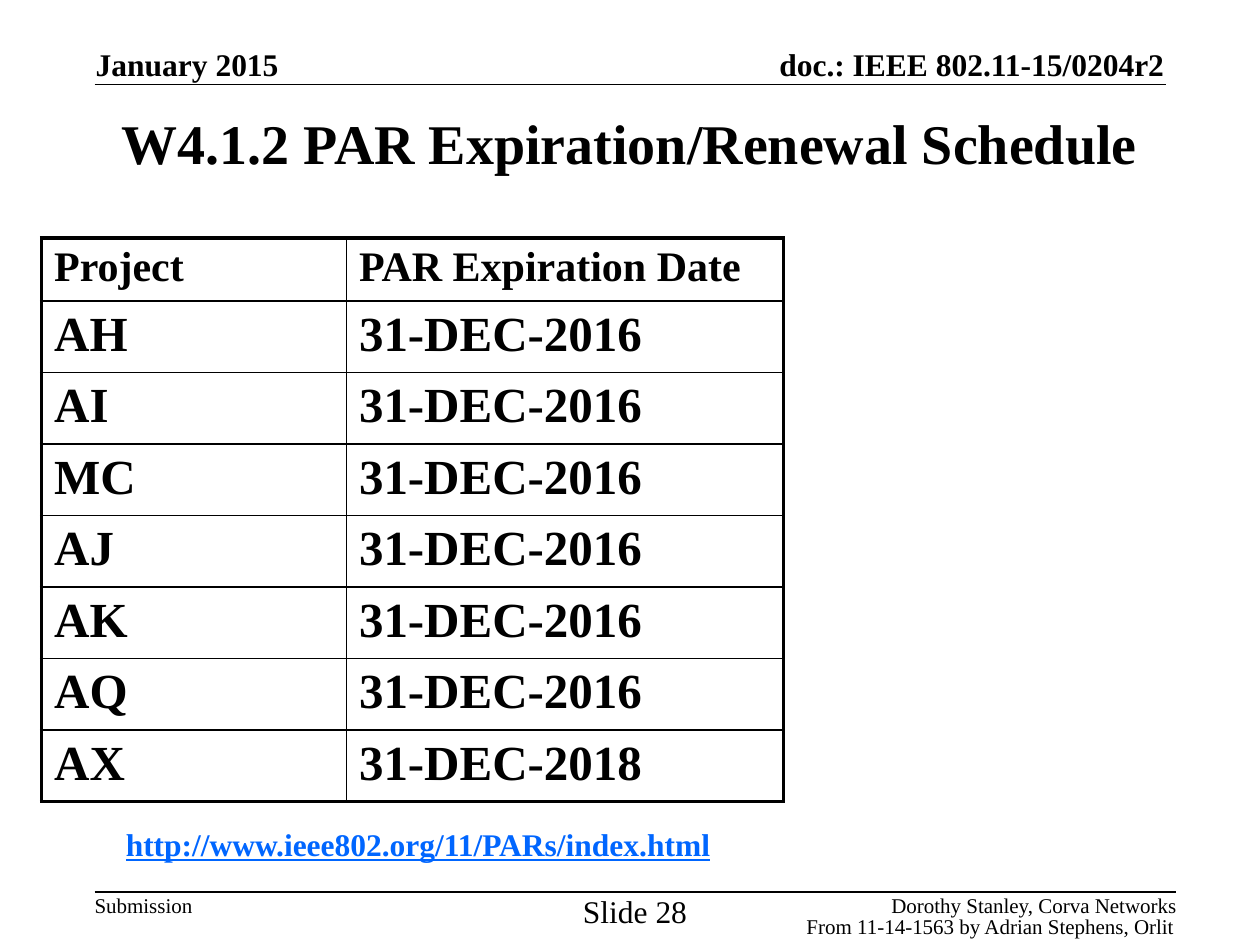
from lxml import etree
from pptx import Presentation
from pptx.dml.color import RGBColor
from pptx.enum.shapes import MSO_CONNECTOR
from pptx.enum.text import MSO_ANCHOR, PP_ALIGN
from pptx.oxml.ns import qn
from pptx.util import Inches, Pt

LEFT, CENTER, RIGHT = PP_ALIGN.LEFT, PP_ALIGN.CENTER, PP_ALIGN.RIGHT
TOP, MIDDLE, BOTTOM = MSO_ANCHOR.TOP, MSO_ANCHOR.MIDDLE, MSO_ANCHOR.BOTTOM
BLACK, LINK_BLUE = "000000", "0066FF"
THIN, MEDIUM, THICK = Pt(1), Pt(1.5), Pt(2.25)


def write(paragraph, text, size, color=BLACK, **styles):
    run = paragraph.add_run()
    run.text = text
    font_format = {"name": "Times New Roman", "size": Pt(size), **styles}
    for attribute, value in font_format.items():
        setattr(run.font, attribute, value)
    run.font.color.rgb = RGBColor.from_string(color)


def set_border(cell, side, width):
    """Draw one cell edge; side is L, R, T or B, given in that order."""
    edge = etree.SubElement(cell._tc.get_or_add_tcPr(), qn(f"a:ln{side}"), w=str(width))
    fill = etree.SubElement(edge, qn("a:solidFill"))
    etree.SubElement(fill, qn("a:srgbClr"), val=BLACK)


prs = Presentation()
prs.slide_width, prs.slide_height = Inches(10), Inches(7.5)
slide = prs.slides.add_slide(prs.slide_layouts[6])

# Header and footer rules
for rule_y, rule_end in ((0.67, 9.25), (7.08, 9.33)):
    rule = slide.shapes.add_connector(
        MSO_CONNECTOR.STRAIGHT, Inches(0.75), Inches(rule_y), Inches(rule_end), Inches(rule_y))
    rule.line.color.rgb = RGBColor.from_string(BLACK)
    rule.line.width = THIN
    etree.SubElement(rule._element.spPr, qn("a:effectLst"))

# Text, position, horizontal and vertical inset, alignment, anchor, font
bold = {"size": 18, "bold": True}
link = {**bold, "color": LINK_BLUE, "underline": True}
texts = [
    ("January 2015", (0.76, 0.36, 1.99, 0.3), (0, 0), LEFT, BOTTOM, bold),
    ("doc.: IEEE 802.11-15/0204r2", (5.65, 0.36, 3.59, 0.3), (0, 0), RIGHT, BOTTOM, bold),
    ("W4.1.2 PAR Expiration/Renewal Schedule", (0.75, 0.75, 8.5, 0.75), (0.1, 0.05),
     CENTER, MIDDLE, {"size": 32, "bold": True}),
    ("http://www.ieee802.org/11/PARs/index.html", (0.9, 6.5, 5.03, 0.4), (0.1, 0.05),
     LEFT, TOP, link),
    ("Submission", (0.75, 7.08, 0.78, 0.2), (0, 0), LEFT, TOP, {"size": 12}),
    ("Slide 28", (4.54, 7.08, 1, 0.3), (0, 0), CENTER, TOP, {"size": 18}),
    ("Dorothy Stanley, Corva Networks", (5.84, 7.08, 3.5, 0.2), (0, 0),
     RIGHT, TOP, {"size": 12}),
    ("From 11-14-1563 by Adrian Stephens, Orlit", (5.82, 7.25, 3.5, 0.2), (0, 0),
     RIGHT, TOP, {"size": 12}),
]
for text, position, (inset_x, inset_y), alignment, anchor, font in texts:
    frame = slide.shapes.add_textbox(*map(Inches, position)).text_frame
    frame_format = {
        "word_wrap": True, "vertical_anchor": anchor,
        "margin_left": Inches(inset_x), "margin_right": Inches(inset_x),
        "margin_top": Inches(inset_y), "margin_bottom": Inches(inset_y),
    }
    for attribute, value in frame_format.items():
        setattr(frame, attribute, value)
    frame.paragraphs[0].alignment = alignment
    write(frame.paragraphs[0], text, **font)

# PAR expiration table
expirations = [("Project", "PAR Expiration Date")]
expirations += [(project, "31-DEC-2016") for project in ("AH", "AI", "MC", "AJ", "AK", "AQ")]
expirations.append(("AX", "31-DEC-2018"))

table_height, header_height = 4.47, 0.5
last_row = len(expirations) - 1
project_height = (table_height - header_height) / last_row

schedule = slide.shapes.add_table(
    len(expirations), 2, Inches(0.33), Inches(1.89), Inches(5.89), Inches(table_height)).table
schedule.first_row = schedule.horz_banding = False
for column, width in zip(schedule.columns, (2.42, 3.47)):
    column.width = Inches(width)

for row_index, values in enumerate(expirations):
    is_header = row_index == 0
    schedule.rows[row_index].height = Inches(header_height if is_header else project_height)
    for column_index, value in enumerate(values):
        cell = schedule.cell(row_index, column_index)
        write(cell.text_frame.paragraphs[0], value, 24 if is_header else 28, bold=True)
        borders = {
            "L": THICK if column_index == 0 else THIN,
            "R": THICK if column_index == 1 else THIN,
            "T": THICK if is_header else THIN,
            "B": MEDIUM if row_index == last_row else THIN,
        }
        for side, width in borders.items():
            set_border(cell, side, width)
        cell.fill.background()

prs.save("out.pptx")
